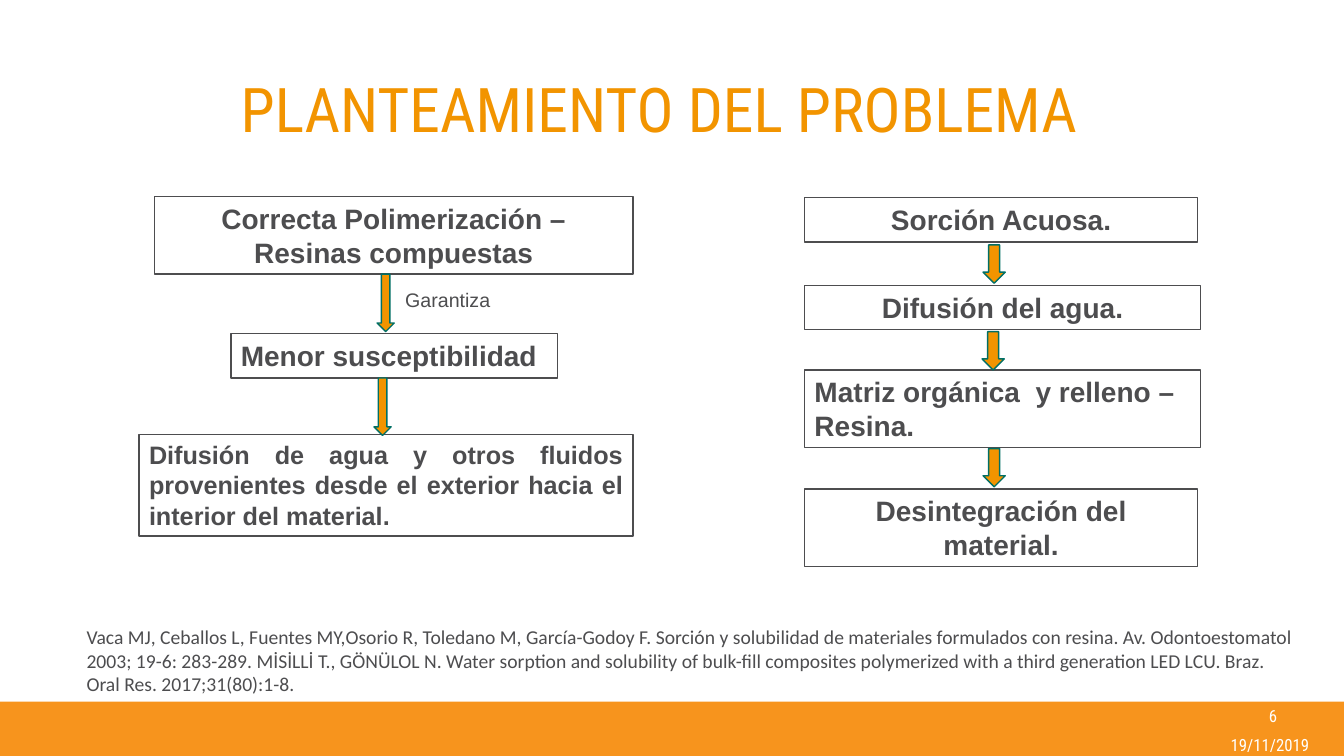
from dataclasses import dataclass

import pptx
import pptx.dml.color
import pptx.enum.shapes
import pptx.enum.text
import pptx.util

Inches = pptx.util.Inches
Pt = pptx.util.Pt
RGBColor = pptx.dml.color.RGBColor
Align = pptx.enum.text.PP_ALIGN
Anchor = pptx.enum.text.MSO_ANCHOR
Preset = pptx.enum.shapes.MSO_SHAPE

ORANGE = RGBColor(0xF2, 0x94, 0x00)
FOOTER_ORANGE = RGBColor(0xF7, 0x94, 0x1D)
GREEN = RGBColor(0x00, 0x6F, 0x65)
GRAY = RGBColor(0x4D, 0x4D, 0x4F)
WHITE = RGBColor(0xFF, 0xFF, 0xFF)

HEADING_FONT = "Roboto Condensed"
REFERENCES = (
    "Vaca MJ, Ceballos L, Fuentes MY,Osorio R, Toledano M, García-Godoy F. "
    "Sorción y solubilidad de materiales formulados con resina. "
    "Av. Odontoestomatol 2003; 19-6: 283-289. MİSİLLİ T., GÖNÜLOL N. "
    "Water sorption and solubility of bulk-fill composites polymerized with "
    "a third generation LED LCU. Braz. Oral Res. 2017;31(80):1-8."
)


@dataclass(frozen=True)
class Area:
    left: float
    top: float
    width: float
    height: float

    def lengths(self) -> tuple:
        return tuple(Inches(v) for v in (self.left, self.top, self.width, self.height))


@dataclass(frozen=True)
class Style:
    size: int
    font: str = "Arial"
    color: RGBColor = GRAY
    bold: bool = False
    align: Align = Align.LEFT
    anchor: Anchor = Anchor.TOP


@dataclass(frozen=True)
class Step:
    text: str
    area: Area
    align: Align = Align.CENTER
    size: int = 20


@dataclass(frozen=True)
class Label:
    text: str
    area: Area
    style: Style


STEPS = (
    # Left chain
    Step("Correcta Polimerización – Resinas compuestas", Area(1.53, 1.95, 4.75, 0.77)),
    Step("Menor susceptibilidad", Area(2.29, 3.31, 3.24, 0.44), Align.LEFT),
    Step("Difusión de agua y otros fluidos provenientes desde el exterior "
         "hacia el interior del material.",
         Area(1.38, 4.31, 4.9, 1.01), Align.JUSTIFY, 18),
    # Right chain
    Step("Sorción Acuosa.", Area(7.98, 1.96, 3.9, 0.44)),
    Step("Difusión del agua.", Area(7.98, 2.83, 3.93, 0.44)),
    Step("Matriz orgánica  y relleno – Resina.", Area(7.98, 3.67, 3.93, 0.77), Align.LEFT),
    Step("Desintegración del material.", Area(7.98, 4.85, 3.9, 0.77)),
)

ARROWS = (
    Area(3.74, 2.72, 0.17, 0.57),
    Area(3.71, 3.75, 0.17, 0.57),
    Area(9.75, 2.43, 0.22, 0.38),
    Area(9.74, 3.29, 0.22, 0.38),
    Area(9.75, 4.45, 0.22, 0.38),
)

FOOTER_STYLE = Style(12, HEADING_FONT, WHITE, align=Align.CENTER, anchor=Anchor.MIDDLE)
LABELS = (
    Label("19/11/2019", Area(11.89, 7.28, 1.41, 0.21), FOOTER_STYLE),
    Label("6", Area(11.92, 6.95, 1.41, 0.3), FOOTER_STYLE),
    Label("Garantiza", Area(3.92, 2.81, 1.1, 0.34), Style(14)),
    Label(REFERENCES, Area(0.76, 6.15, 12.19, 1.35), Style(14, "Calibri")),
)


def write(shape, text: str, style: Style) -> None:
    frame = shape.text_frame
    frame.text = text
    frame.word_wrap = True
    frame.auto_size = pptx.enum.text.MSO_AUTO_SIZE.NONE
    frame.vertical_anchor = style.anchor
    para = frame.paragraphs[0]
    para.alignment = style.align
    font = para.runs[0].font
    font.name = style.font
    font.size = Pt(style.size)
    font.bold = style.bold
    font.color.rgb = style.color


def add_figure(page, preset: Preset, area: Area, fill: RGBColor, line: RGBColor | None):
    shape = page.shapes.add_shape(preset, *area.lengths())
    shape.shadow.inherit = False
    shape.fill.solid()
    shape.fill.fore_color.rgb = fill
    if line is None:
        shape.line.fill.background()
    else:
        shape.line.color.rgb = line
        shape.line.width = Pt(1)
    return shape


def add_title(page, text: str, area: Area) -> None:
    title = page.shapes.title
    title.left, title.top, title.width, title.height = area.lengths()
    write(title, text, Style(44, HEADING_FONT, ORANGE, align=Align.CENTER))
    title.text_frame.paragraphs[0].line_spacing = Pt(54)


def main() -> None:
    deck = pptx.Presentation()
    deck.slide_width, deck.slide_height = Inches(13.33), Inches(7.5)
    page = deck.slides.add_slide(deck.slide_layouts[5])

    # Title and footer band
    add_title(page, "PLANTEAMIENTO DEL PROBLEMA", Area(0.46, 0.64, 12.16, 0.98))
    add_figure(page, Preset.RECTANGLE, Area(0, 6.96, 13.33, 0.54), FOOTER_ORANGE, None)

    # Both chains of steps
    for step in STEPS:
        box = add_figure(page, Preset.RECTANGLE, step.area, WHITE, GRAY)
        write(box, step.text, Style(step.size, bold=True, align=step.align))
    for area in ARROWS:
        add_figure(page, Preset.DOWN_ARROW, area, ORANGE, GREEN)

    # Footer texts, arrow label and references
    for label in LABELS:
        box = page.shapes.add_textbox(*label.area.lengths())
        write(box, label.text, label.style)

    deck.save("out.pptx")


if __name__ == "__main__":
    main()
